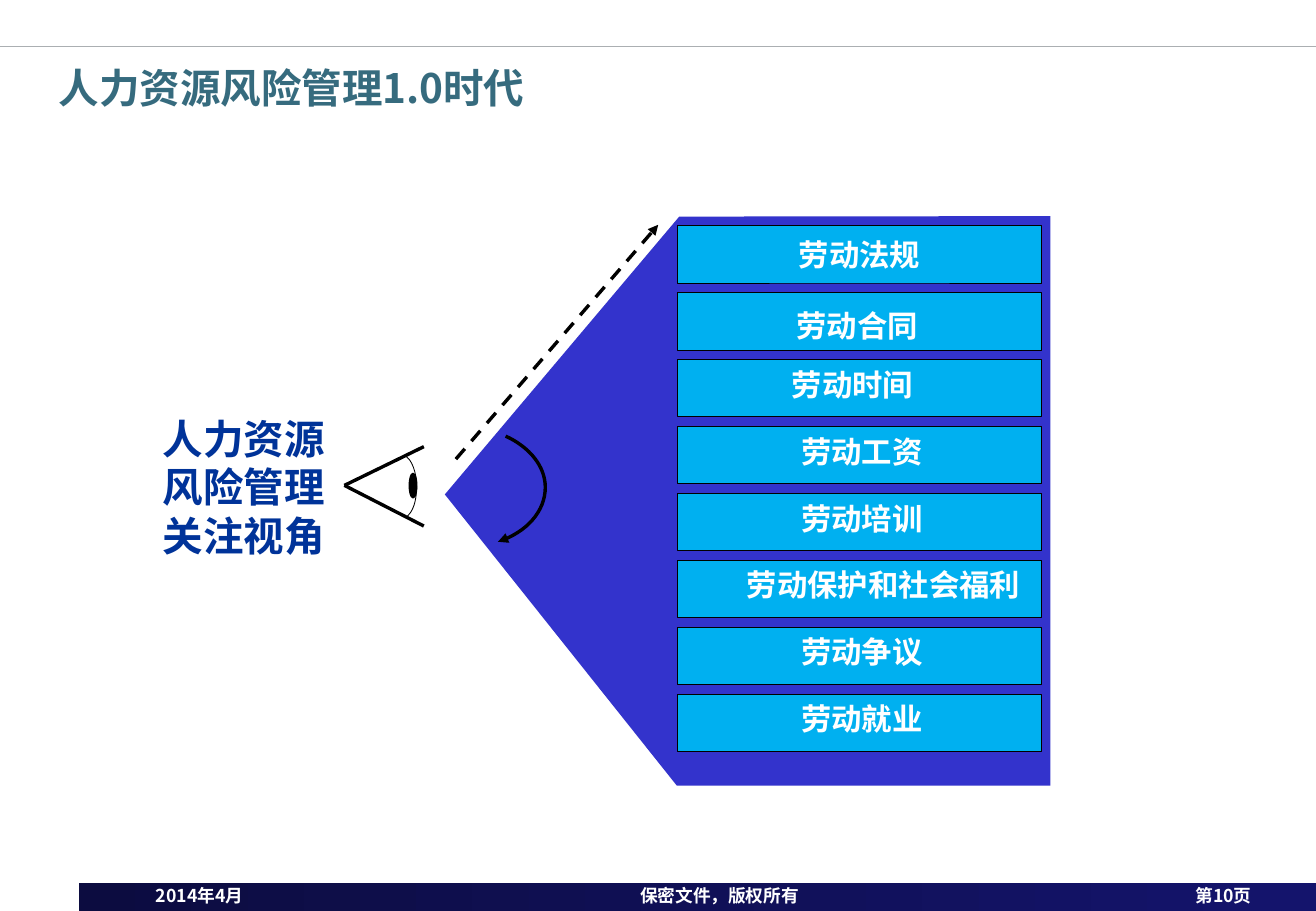
from lxml.etree import SubElement
from pptx import Presentation
from pptx.dml.color import RGBColor
from pptx.enum.dml import MSO_LINE
from pptx.enum.shapes import MSO_CONNECTOR, MSO_SHAPE
from pptx.enum.text import MSO_ANCHOR, PP_ALIGN
from pptx.oxml.ns import qn
from pptx.util import Cm, Pt

FONT = "Noto Sans CJK SC"
BLACK, WHITE = "000000", "FFFFFF"

# Label, then its shift right and down from the centre of the bar (cm)
TOPICS = [
    ("劳动法规", 0, 0),
    ("劳动合同", -0.05, 0.08),
    ("劳动时间", -0.15, -0.09),
    ("劳动工资", 0.05, -0.09),
    ("劳动培训", 0.05, -0.09),
    ("劳动保护和社会福利", 0.5, -0.09),
    ("劳动争议", 0.05, -0.09),
    ("劳动就业", 0.05, -0.09),
]


def color(hex_string):
    return RGBColor.from_string(hex_string)


def write(frame, text, size, hex_color, align=PP_ALIGN.LEFT, anchor=MSO_ANCHOR.TOP):
    frame.text = text
    frame.vertical_anchor = anchor
    for paragraph in frame.paragraphs:
        paragraph.alignment = align
        for run in paragraph.runs:
            run.font.name = FONT
            run.font.size = Pt(size)
            run.font.bold = True
            run.font.color.rgb = color(hex_color)
            SubElement(run.font._element, qn("a:ea"), typeface=FONT)


def add_text(slide, text, left, top, width, height, size, hex_color, **layout):
    box = slide.shapes.add_textbox(Cm(left), Cm(top), Cm(width), Cm(height))
    box.text_frame.word_wrap = True
    write(box.text_frame, text, size, hex_color, **layout)


def style(shape, fill=None, line=None, weight=0.5):
    shape.shadow.inherit = False
    if fill:
        shape.fill.solid()
        shape.fill.fore_color.rgb = color(fill)
    else:
        shape.fill.background()
    if line:
        shape.line.color.rgb = color(line)
        shape.line.width = Pt(weight)
    else:
        shape.line.fill.background()


def add_block(slide, kind, left, top, width, height, **look):
    block = slide.shapes.add_shape(kind, Cm(left), Cm(top), Cm(width), Cm(height))
    style(block, **look)
    return block


def add_outline(slide, points, close=False, **look):
    corners = [(Cm(x), Cm(y)) for x, y in points]
    builder = slide.shapes.build_freeform(*corners[0])
    builder.add_line_segments(corners[1:], close=close)
    outline = builder.convert_to_shape()
    style(outline, **look)
    return outline


def add_line(slide, start, end, hex_color=BLACK, weight=2):
    line = slide.shapes.add_connector(
        MSO_CONNECTOR.STRAIGHT, Cm(start[0]), Cm(start[1]), Cm(end[0]), Cm(end[1]))
    line.line.color.rgb = color(hex_color)
    line.line.width = Pt(weight)
    SubElement(line._element.spPr, qn("a:effectLst"))
    return line


def add_arrowhead(shape):
    SubElement(shape.line._get_or_add_ln(), qn("a:tailEnd"), type="triangle")


def curve(start, pull_start, pull_end, end, steps=16):
    """Points along a cubic Bezier curve."""
    points = []
    for step in range(steps + 1):
        t = step / steps
        weights = ((1 - t) ** 3, 3 * t * (1 - t) ** 2, 3 * t ** 2 * (1 - t), t ** 3)
        controls = (start, pull_start, pull_end, end)
        points.append(tuple(sum(w * c[axis] for w, c in zip(weights, controls))
                            for axis in (0, 1)))
    return points


def add_footer(slide):
    band = add_block(slide, MSO_SHAPE.RECTANGLE, 1.65, 18.46, 25.86, 0.59)
    band.fill.gradient()
    band.fill.gradient_angle = 0
    for stop, shade in zip(band.fill.gradient_stops, ("0C0C40", "14146C")):
        stop.color.rgb = color(shade)
    for text, left, width, align in (
            ("2014年4月", 3.01, 4.6, PP_ALIGN.LEFT),
            ("保密文件，版权所有", 7.59, 14.91, PP_ALIGN.CENTER),
            ("第10页", 23.52, 4.11, PP_ALIGN.CENTER)):
        add_text(slide, text, left, 18.36, width, 0.71, 10.5, WHITE,
                 align=align, anchor=MSO_ANCHOR.MIDDLE)


def add_eye(slide):
    add_block(slide, MSO_SHAPE.OVAL, 8.56, 9.9, 0.15, 0.51,
              fill=BLACK, line=BLACK, weight=1)
    corner = (7.2, 10.15)
    add_line(slide, corner, (8.86, 9.34))
    add_line(slide, corner, (8.86, 11))
    add_outline(slide, curve((8.46, 9.53), (8.61, 9.6), (8.71, 9.88), (8.71, 10.18))
                + curve((8.71, 10.18), (8.71, 10.46), (8.64, 10.72), (8.48, 10.82)),
                line=BLACK)


def add_topic_bars(slide):
    for row, (label, right, down) in enumerate(TOPICS):
        bar = add_block(slide, MSO_SHAPE.RECTANGLE, 14.17, 4.72 + 1.4 * row, 7.6, 1.2,
                        fill="00B0F0", line=BLACK)
        frame = bar.text_frame
        frame.word_wrap = False
        # A margin on one side moves the centred label by half its size
        frame.margin_left = Cm(max(2 * right, 0))
        frame.margin_right = Cm(max(-2 * right, 0))
        frame.margin_top = Cm(max(2 * down, 0))
        frame.margin_bottom = Cm(max(-2 * down, 0))
        write(frame, label, 18, WHITE, PP_ALIGN.CENTER, MSO_ANCHOR.MIDDLE)


def main():
    deck = Presentation()
    deck.slide_width, deck.slide_height = Cm(27.51), Cm(19.05)
    slide = deck.slides.add_slide(deck.slide_layouts[5])

    # Header and footer
    add_footer(slide)
    add_line(slide, (0, 0.97), (27.51, 0.97), "ABAFB2", 1)
    title = slide.shapes.title
    title.left, title.top, title.width, title.height = Cm(0.97), Cm(1.19), Cm(26.09), Cm(2.11)
    write(title.text_frame, "人力资源风险管理1.0时代", 24, "366B7E")

    # Viewpoint
    add_text(slide, "人力资源风险管理关注视角", 3.15, 8.53, 4.39, 3.33, 24, "003399")
    add_eye(slide)

    # Field of view
    add_outline(slide, [(9.3, 10.34), (14.2, 4.53), (21.96, 4.52), (21.96, 16.43), (14.15, 16.43)],
                close=True, fill="3333CC")
    sight_line = add_line(slide, (9.53, 9.6), (13.76, 4.7))
    sight_line.line.dash_style = MSO_LINE.DASH
    add_arrowhead(sight_line)
    sweep = add_outline(
        slide, curve((10.57, 9.12), (11.07, 9.35), (11.4, 9.75), (11.4, 10.19))
        + curve((11.4, 10.19), (11.4, 10.69), (11.02, 11.13), (10.41, 11.33)),
        line=BLACK, weight=2)
    add_arrowhead(sweep)
    add_topic_bars(slide)

    deck.save("out.pptx")


if __name__ == "__main__":
    main()
